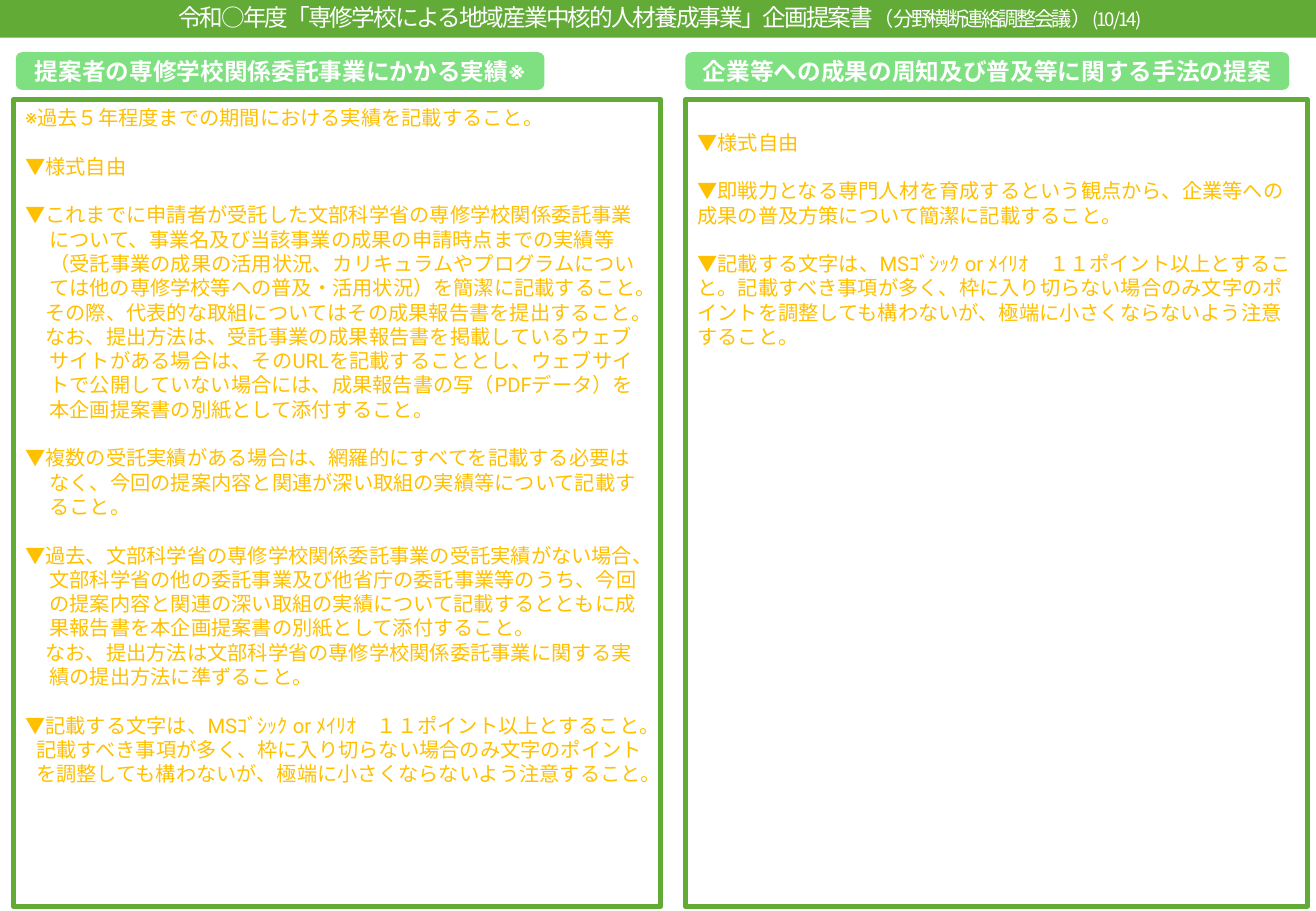
from dataclasses import dataclass

from lxml.etree import SubElement
from pptx import Presentation
from pptx.dml.color import RGBColor
from pptx.enum.lang import MSO_LANGUAGE_ID
from pptx.enum.shapes import MSO_SHAPE
from pptx.enum.text import MSO_ANCHOR, MSO_AUTO_SIZE, PP_ALIGN
from pptx.oxml.ns import qn
from pptx.shapes.autoshape import Shape
from pptx.slide import Slide
from pptx.text.text import _Paragraph
from pptx.util import Emu, Pt

SCALE = 9144  # EMU in one px, 100 px to the inch


@dataclass(frozen=True)
class Theme:
    green: RGBColor = RGBColor(0x62, 0xAB, 0x37)
    mint: RGBColor = RGBColor(0x7E, 0xE0, 0x81)
    amber: RGBColor = RGBColor(0xFF, 0xC0, 0x00)
    white: RGBColor = RGBColor(0xFF, 0xFF, 0xFF)
    main: str = "Roboto"
    alt: str = "Noto Sans CJK JP"
    head: float = 14
    body: float = 12
    small: float = 11
    border: float = 3
    gap: float = 14.4  # one line of body text


@dataclass(frozen=True)
class Box:
    left: int
    top: int
    width: int
    height: int


@dataclass(frozen=True)
class Run:
    text: str
    size: float
    color: RGBColor
    face: str
    bold: bool = False
    track: float = 0


@dataclass(frozen=True)
class Para:
    runs: tuple[Run, ...]
    hang: int = 0
    gap: bool = False


@dataclass(frozen=True)
class Panel:
    label: str
    pill: Box
    frame: Box
    inset: int
    paras: tuple[Para, ...]


THEME = Theme()


def px(count: int) -> Emu:
    return Emu(count * SCALE)


def note(text: str, hang: int = 0, gap: bool = False) -> Para:
    return Para((Run(text, THEME.body, THEME.amber, THEME.main),), hang, gap)


def rule(hang: int = 0) -> Para:
    """The note on type size that closes both panels."""
    parts = (
        ("▼記載する文字は、MSｺﾞｼｯｸ or ﾒｲﾘｵ　１１ポイント以上とすること。", THEME.main),
        ("記載すべき事項", THEME.alt),
        ("が多く、枠に入り切らない場合のみ文字のポイントを調整しても構わないが、"
         "極端に小さくならないよう注意すること。", THEME.main),
    )
    runs = tuple(Run(text, THEME.body, THEME.amber, face) for text, face in parts)
    return Para(runs, hang, True)


def banner(text: str, size: float, track: float) -> Run:
    return Run(text, size, THEME.white, THEME.alt, track=track)


# Content
TITLE = Para((
    banner("令和○年度「専修学校による地域産業中核的人材養成事業」企画提案書", THEME.head, -1.2),
    banner("（", THEME.body, -1.2),
    banner("分野横断連絡調整会議", THEME.body, -1.6),
    banner("）", THEME.body, -1.2),
    banner("(10/14)", THEME.small, -1.2),
))

PANELS = (
    Panel(
        "提案者の専修学校関係委託事業にかかる実績※",
        Box(13, 43, 435, 31), Box(11, 82, 533, 664), 5,
        (
            note("※過去５年程度までの期間における実績を記載すること。"),
            note("▼様式自由", gap=True),
            note("▼これまでに申請者が受託した文部科学省の専修学校関係委託事業について、"
                 "事業名及び当該事業の成果の申請時点までの実績等（受託事業の成果の活用状況、"
                 "カリキュラムやプログラムについては他の専修学校等への普及・活用状況）を"
                 "簡潔に記載すること。", 20, True),
            note("　その際、代表的な取組についてはその成果報告書を提出すること。", 20),
            note("　なお、提出方法は、受託事業の成果報告書を掲載しているウェブサイトがある場合は、"
                 "そのURLを記載することとし、ウェブサイトで公開していない場合には、"
                 "成果報告書の写（PDFデータ）を本企画提案書の別紙として添付すること。", 20),
            note("▼複数の受託実績がある場合は、網羅的にすべてを記載する必要はなく、"
                 "今回の提案内容と関連が深い取組の実績等について記載すること。", 20, True),
            note("▼過去、文部科学省の専修学校関係委託事業の受託実績がない場合、"
                 "文部科学省の他の委託事業及び他省庁の委託事業等のうち、"
                 "今回の提案内容と関連の深い取組の実績について記載するとともに"
                 "成果報告書を本企画提案書の別紙として添付すること。", 20, True),
            note("　なお、提出方法は文部科学省の専修学校関係委託事業に関する実績の"
                 "提出方法に準ずること。", 20),
            rule(9),
        ),
    ),
    Panel(
        "企業等への成果の周知及び普及等に関する手法の提案",
        Box(564, 43, 497, 31), Box(564, 82, 512, 664), 25,
        (
            note("▼様式自由"),
            note("▼即戦力となる専門人材を育成するという観点から、"
                 "企業等への成果の普及方策について簡潔に記載すること。", gap=True),
            rule(),
        ),
    ),
)


# Text
def add_run(line: _Paragraph, item: Run) -> None:
    run = line.add_run()
    run.text = item.text
    style = {"size": Pt(item.size), "bold": item.bold, "name": item.face,
             "language_id": MSO_LANGUAGE_ID.JAPANESE}
    for key, value in style.items():
        setattr(run.font, key, value)
    run.font.color.rgb = item.color
    props = run._r.get_or_add_rPr()
    SubElement(props, qn("a:ea")).set("typeface", THEME.main)
    if item.track:
        props.set("spc", str(round(item.track * 100)))


def write(shape: Shape, paras: tuple[Para, ...], align: PP_ALIGN,
          anchor: MSO_ANCHOR, inset: int = 5) -> None:
    frame = shape.text_frame
    style = {"word_wrap": True, "auto_size": MSO_AUTO_SIZE.NONE, "vertical_anchor": anchor,
             "margin_left": px(10), "margin_right": px(10),
             "margin_top": px(inset), "margin_bottom": px(5)}
    for key, value in style.items():
        setattr(frame, key, value)
    for index, para in enumerate(paras):
        line = frame.add_paragraph() if index else frame.paragraphs[0]
        line.alignment = align
        line.space_before = Pt(THEME.gap if para.gap else 0)
        if para.hang:
            props = line._p.get_or_add_pPr()
            props.set("marL", str(px(para.hang)))
            props.set("indent", str(px(-para.hang)))
        for item in para.runs:
            add_run(line, item)


# Shapes
def add_box(slide: Slide, kind: MSO_SHAPE, box: Box) -> Shape:
    shape = slide.shapes.add_shape(
        kind, px(box.left), px(box.top), px(box.width), px(box.height))
    shape.shadow.inherit = False
    return shape


def add_panel(slide: Slide, panel: Panel) -> None:
    pill = add_box(slide, MSO_SHAPE.ROUNDED_RECTANGLE, panel.pill)
    pill.fill.solid()
    pill.fill.fore_color.rgb = THEME.mint
    pill.line.fill.background()
    label = Run(panel.label, THEME.head, THEME.white, THEME.main, bold=True)
    write(pill, (Para((label,)),), PP_ALIGN.CENTER, MSO_ANCHOR.MIDDLE)

    frame = add_box(slide, MSO_SHAPE.RECTANGLE, panel.frame)
    frame.fill.background()
    frame.line.color.rgb = THEME.green
    frame.line.width = Pt(THEME.border)
    write(frame, panel.paras, PP_ALIGN.LEFT, MSO_ANCHOR.TOP, panel.inset)


def add_title(slide: Slide, box: Box) -> None:
    title = slide.shapes.title
    for key in ("left", "top", "width", "height"):
        setattr(title, key, px(getattr(box, key)))
    title.fill.solid()
    title.fill.fore_color.rgb = THEME.green
    write(title, (TITLE,), PP_ALIGN.CENTER, MSO_ANCHOR.TOP)


def main() -> None:
    deck = Presentation()
    deck.slide_width, deck.slide_height = px(1083), px(750)
    slide = deck.slides.add_slide(deck.slide_layouts[5])
    add_title(slide, Box(0, -3, 1086, 34))
    for panel in PANELS:
        add_panel(slide, panel)
    deck.save("out.pptx")


if __name__ == "__main__":
    main()
